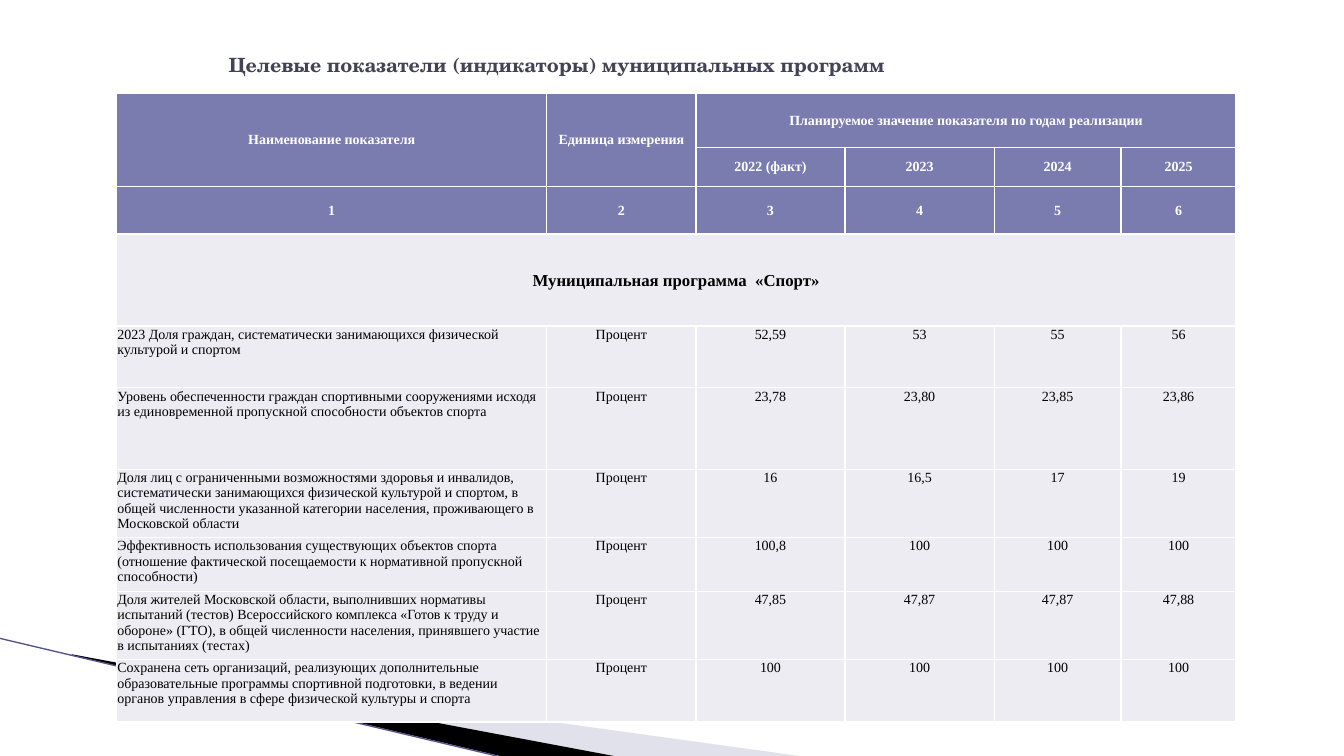
from dataclasses import dataclass

from lxml.etree import SubElement
from pptx import Presentation
from pptx.dml.color import RGBColor
from pptx.enum.shapes import MSO_CONNECTOR
from pptx.enum.text import MSO_ANCHOR, PP_ALIGN
from pptx.oxml.ns import qn
from pptx.util import Pt


@dataclass(frozen=True)
class Theme:
    title: str = "424456"
    header: str = "7A7BAE"
    body: str = "ECECF2"
    white: str = "FFFFFF"
    black: str = "000000"
    pale_wedge: str = "B6B6D1"
    edge: str = "53548A"
    title_font: str = "TeX Gyre Schola"
    table_font: str = "Times New Roman"
    title_size: float = 14
    program_size: float = 12
    cell_size: float = 10


THEME = Theme()
COLUMN_WIDTHS = [307.4, 106.5, 106.5, 106.5, 90.7, 82.1]
ROW_HEIGHTS = [38.8, 28, 34, 65.8, 44, 58.2, 44.6, 38.4, 44.6, 44.6]
HEADER_ROWS = 3
PROGRAM_ROW = 3
MERGES = [((0, 0), (1, 0)), ((0, 1), (1, 1)), ((0, 2), (0, 5)), ((3, 0), (3, 5))]
UNIT = "Процент"
ROWS = [
    ["Наименование показателя", "Единица измерения",
     "Планируемое значение показателя по годам реализации"],
    ["", "", "2022 (факт)", "2023", "2024", "2025"],
    ["1", "2", "3", "4", "5", "6"],
    ["Муниципальная программа  «Спорт»"],
    ["2023 Доля граждан, систематически занимающихся физической культурой и спортом",
     UNIT, "52,59", "53", "55", "56"],
    ["Уровень обеспеченности граждан спортивными сооружениями исходя из "
     "единовременной пропускной способности объектов спорта",
     UNIT, "23,78", "23,80", "23,85", "23,86"],
    ["Доля лиц с ограниченными возможностями здоровья и инвалидов, систематически "
     "занимающихся физической культурой и спортом, в общей численности указанной "
     "категории населения, проживающего в Московской области",
     UNIT, "16", "16,5", "17", "19"],
    ["Эффективность использования существующих объектов спорта (отношение "
     "фактической посещаемости к нормативной пропускной способности)",
     UNIT, "100,8", "100", "100", "100"],
    ["Доля жителей Московской области, выполнивших нормативы испытаний (тестов) "
     "Всероссийского комплекса «Готов к труду и обороне» (ГТО), в общей численности "
     "населения, принявшего участие в испытаниях (тестах)",
     UNIT, "47,85", "47,87", "47,87", "47,88"],
    ["Сохранена сеть организаций, реализующих дополнительные образовательные "
     "программы спортивной подготовки, в ведении органов управления в сфере "
     "физической культуры и спорта",
     UNIT, "100", "100", "100", "100"],
]


def rgb(color):
    return RGBColor.from_string(color)


def style(paragraph, font_name, size, color, bold):
    font = paragraph.font
    font.name, font.size, font.bold = font_name, Pt(size), bold
    font.color.rgb = rgb(color)


def add_wedge(slide, points, color, opacity=100):
    start, *rest = [(Pt(x), Pt(y)) for x, y in points]
    builder = slide.shapes.build_freeform(*start)
    builder.add_line_segments(rest, close=True)
    wedge = builder.convert_to_shape()
    wedge.shadow.inherit = False
    wedge.line.fill.background()
    wedge.fill.solid()
    wedge.fill.fore_color.rgb = rgb(color)
    if opacity < 100:
        tint = wedge.fill._xPr.find(".//" + qn("a:srgbClr"))
        SubElement(tint, qn("a:alpha"), val=str(opacity * 1000))


def add_edge(slide, start, end):
    ends = [Pt(value) for value in (*start, *end)]
    edge = slide.shapes.add_connector(MSO_CONNECTOR.STRAIGHT, *ends)
    edge.line.color.rgb = rgb(THEME.edge)
    edge.line.width = Pt(0.95)
    SubElement(edge._element.spPr, qn("a:effectLst"))


def add_title(slide, text):
    title = slide.shapes.add_textbox(Pt(156.2), Pt(21.6), Pt(648), Pt(49.7))
    frame = title.text_frame
    frame.word_wrap = True
    frame.vertical_anchor = MSO_ANCHOR.MIDDLE
    frame.text = text
    style(frame.paragraphs[0], THEME.title_font, THEME.title_size, THEME.title, True)


def add_borders(cell):
    properties = cell._tc.get_or_add_tcPr()
    for side in ("lnL", "lnR", "lnT", "lnB"):
        border = SubElement(properties, qn("a:" + side), w=str(Pt(1)))
        fill = SubElement(border, qn("a:solidFill"))
        SubElement(fill, qn("a:srgbClr"), val=THEME.white)


def format_cell(cell, row, column):
    is_header = row < HEADER_ROWS
    is_program = row == PROGRAM_ROW
    add_borders(cell)
    cell.fill.solid()
    cell.fill.fore_color.rgb = rgb(THEME.header if is_header else THEME.body)
    cell.margin_left = cell.margin_right = cell.margin_top = Pt(0.7)
    cell.margin_bottom = 0
    is_heading = is_header or is_program
    cell.vertical_anchor = MSO_ANCHOR.MIDDLE if is_heading else MSO_ANCHOR.TOP
    paragraph = cell.text_frame.paragraphs[0]
    is_name = column == 0 and not is_heading
    paragraph.alignment = PP_ALIGN.LEFT if is_name else PP_ALIGN.CENTER
    style(paragraph, THEME.table_font,
          THEME.program_size if is_program else THEME.cell_size,
          THEME.white if is_header else THEME.black, is_heading)


def add_indicators(slide):
    indicators = slide.shapes.add_table(
        len(ROW_HEIGHTS), len(COLUMN_WIDTHS), Pt(83.2), Pt(66.4),
        Pt(sum(COLUMN_WIDTHS)), Pt(sum(ROW_HEIGHTS))).table
    for column, width in zip(indicators.columns, COLUMN_WIDTHS):
        column.width = Pt(width)
    for row, height in zip(indicators.rows, ROW_HEIGHTS):
        row.height = Pt(height)
    for r, texts in enumerate(ROWS):
        for c, text in enumerate(texts):
            indicators.cell(r, c).text = text
        for c in range(len(COLUMN_WIDTHS)):
            format_cell(indicators.cell(r, c), r, c)
    for first, last in MERGES:
        indicators.cell(*first).merge(indicators.cell(*last))


def main():
    deck = Presentation()
    deck.slide_width, deck.slide_height = Pt(960), Pt(540)
    slide = deck.slides.add_slide(deck.slide_layouts[6])
    add_wedge(slide, [(52.6, 468.5), (571, 540), (437.8, 540), (52.6, 468)],
              THEME.pale_wedge, 40)
    add_wedge(slide, [(51.1, 467.3), (438.5, 540), (357.1, 540), (51.8, 468)],
              THEME.black)
    add_edge(slide, (0, 456), (355, 540))
    add_title(slide, "Целевые показатели (индикаторы) муниципальных программ")
    add_indicators(slide)
    deck.save("out.pptx")


if __name__ == "__main__":
    main()
